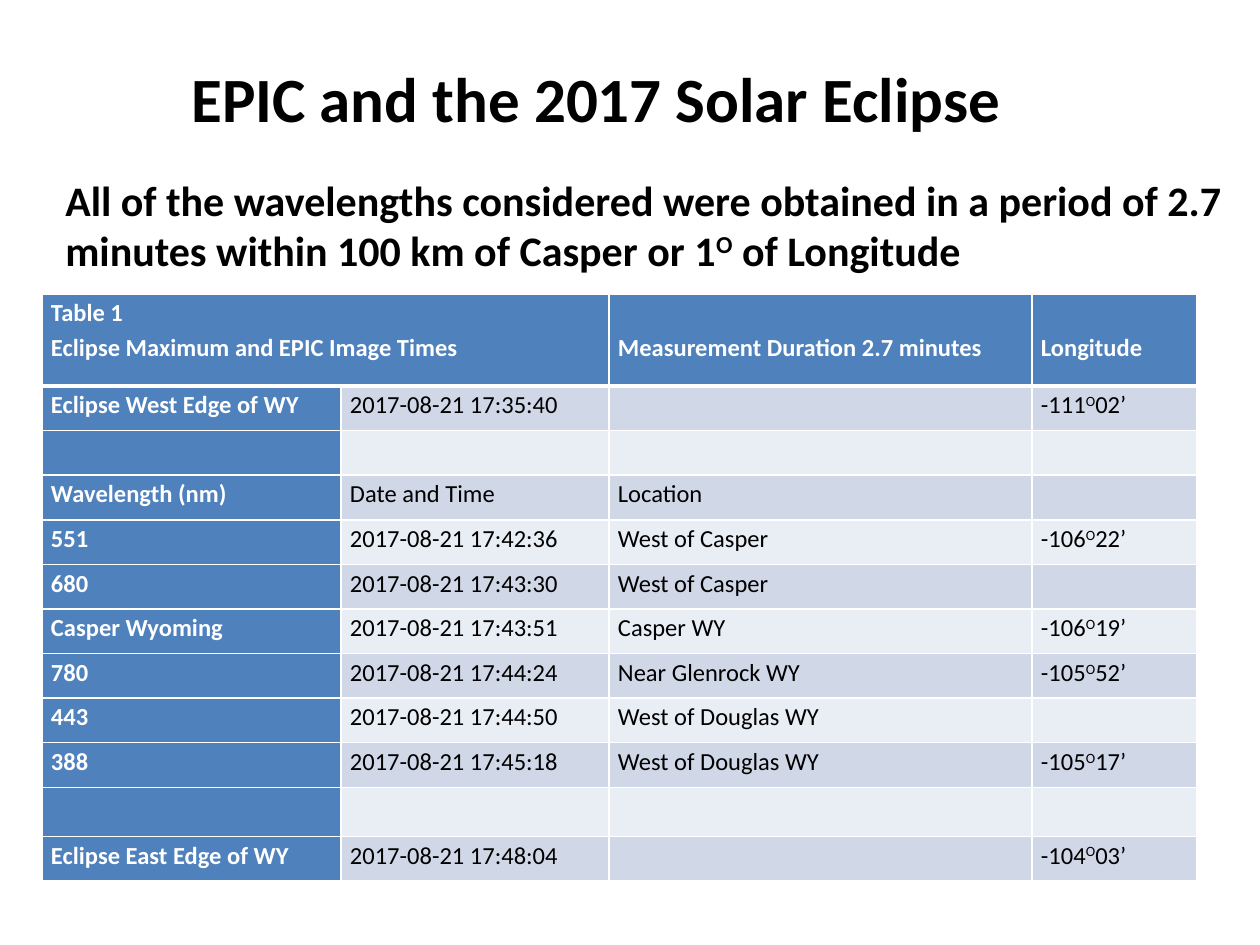
from lxml.etree import SubElement
from pptx import Presentation
from pptx.dml.color import RGBColor
from pptx.enum.text import MSO_AUTO_SIZE
from pptx.oxml.ns import qn
from pptx.util import Emu, Pt

FONT = "Calibri"
BLACK = RGBColor(0x00, 0x00, 0x00)
WHITE = RGBColor(0xFF, 0xFF, 0xFF)
BLUE = RGBColor(0x4F, 0x81, 0xBD)
BAND_DARK = RGBColor(0xD0, 0xD8, 0xE8)
BAND_LIGHT = RGBColor(0xE9, 0xED, 0xF4)

COLUMN_WIDTHS = [299, 268, 423, 165]
HEADER_HEIGHT = 92
BODY_ROW_HEIGHT = px_row = 446 / 10
SPACER_HEIGHT = 49
SPACER_ROW = 10
HEADER_LINE = 35
CELL_MARGIN = 9

ROWS = [
    ["Table 1\nEclipse Maximum and EPIC Image Times", "",
     "Measurement Duration 2.7 minutes", "Longitude"],
    ["Eclipse West Edge of WY", "2017-08-21 17:35:40", "", "-111^O^02’"],
    ["", "", "", ""],
    ["Wavelength (nm)", "Date and Time", "Location", ""],
    ["551", "2017-08-21 17:42:36", "West of Casper", "-106^O^22’"],
    ["680", "2017-08-21 17:43:30", "West of Casper", ""],
    ["Casper Wyoming", "2017-08-21 17:43:51", "Casper WY", "-106^O^19’"],
    ["780", "2017-08-21 17:44:24", "Near Glenrock WY", "-105^O^52’"],
    ["443", "2017-08-21 17:44:50", "West of Douglas WY", ""],
    ["388", "2017-08-21 17:45:18", "West of Douglas WY", "-105^O^17’"],
    ["", "", "", ""],
    ["Eclipse East Edge of WY", "2017-08-21 17:48:04", "", "-104^O^03’"],
]


def px(length):
    return Emu(round(length * 914400 / 126))


def write_para(para, text, size, color, bold):
    para.font.name = FONT
    para.font.size = Pt(size)
    para.font.bold = bold
    para.font.color.rgb = color
    for index, part in enumerate(text.split("^")):
        if part:
            span = para.add_run()
            span.text = part
            if index % 2:
                span._r.get_or_add_rPr().set("baseline", "30000")


def add_text(page, text, size, left, top, width, height, wrap):
    box = page.shapes.add_textbox(px(left), px(top), px(width), px(height))
    box.text_frame.word_wrap = wrap
    box.text_frame.auto_size = MSO_AUTO_SIZE.SHAPE_TO_FIT_TEXT
    write_para(box.text_frame.paragraphs[0], text, size, BLACK, True)


def set_borders(cell, top, bottom):
    properties = cell._tc.get_or_add_tcPr()
    for side, width in (("L", 1), ("R", 1), ("T", top), ("B", bottom)):
        line = SubElement(properties, qn(f"a:ln{side}"), w=str(Pt(width)))
        fill = SubElement(line, qn("a:solidFill"))
        SubElement(fill, qn("a:srgbClr"), val=str(WHITE))


def style_cell(cell, row, column):
    set_borders(cell, 3 if row == 1 else 1, 3 if row == 0 else 1)
    cell.margin_left = cell.margin_right = px(CELL_MARGIN)
    cell.margin_top = px(HEADER_LINE if row == 0 and column > 1 else 0)
    cell.margin_bottom = 0
    cell.fill.solid()
    if row == 0 or column == 0:
        cell.fill.fore_color.rgb = BLUE
    else:
        cell.fill.fore_color.rgb = BAND_DARK if row % 2 else BAND_LIGHT


def fill_cell(cell, text, heading):
    for index, line in enumerate(text.split("\n")):
        frame = cell.text_frame
        para = frame.add_paragraph() if index else frame.paragraphs[0]
        para.line_spacing = 1.15
        write_para(para, line, 14, WHITE if heading else BLACK, heading)


def row_height(row):
    if row == 0:
        return HEADER_HEIGHT
    return SPACER_HEIGHT if row == SPACER_ROW else BODY_ROW_HEIGHT


def add_times_table(page, left, top):
    heights = [row_height(row) for row in range(len(ROWS))]
    frame = page.shapes.add_table(
        len(ROWS), len(COLUMN_WIDTHS), px(left), px(top),
        px(sum(COLUMN_WIDTHS)), px(sum(heights)))
    table = frame.table
    for column, width in zip(table.columns, COLUMN_WIDTHS):
        column.width = px(width)
    for row, height in zip(table.rows, heights):
        row.height = px(height)
    for row, texts in enumerate(ROWS):
        for column, text in enumerate(texts):
            cell = table.cell(row, column)
            style_cell(cell, row, column)
            fill_cell(cell, text, row == 0 or column == 0)
    table.cell(0, 0).merge(table.cell(0, 1))


def main():
    deck = Presentation()
    deck.slide_width, deck.slide_height = px(1260), px(945)
    page = deck.slides.add_slide(deck.slide_layouts[6])
    add_times_table(page, 42, 294)
    add_text(page, "All of the wavelengths considered were obtained in a period "
             "of 2.7 minutes within 100 km of Casper or 1^O^ of Longitude",
             24, 53, 168, 1197, 115, True)
    add_text(page, "EPIC and the 2017 Solar Eclipse", 36, 179, 53, 843, 89, False)
    deck.save("out.pptx")


if __name__ == "__main__":
    main()
